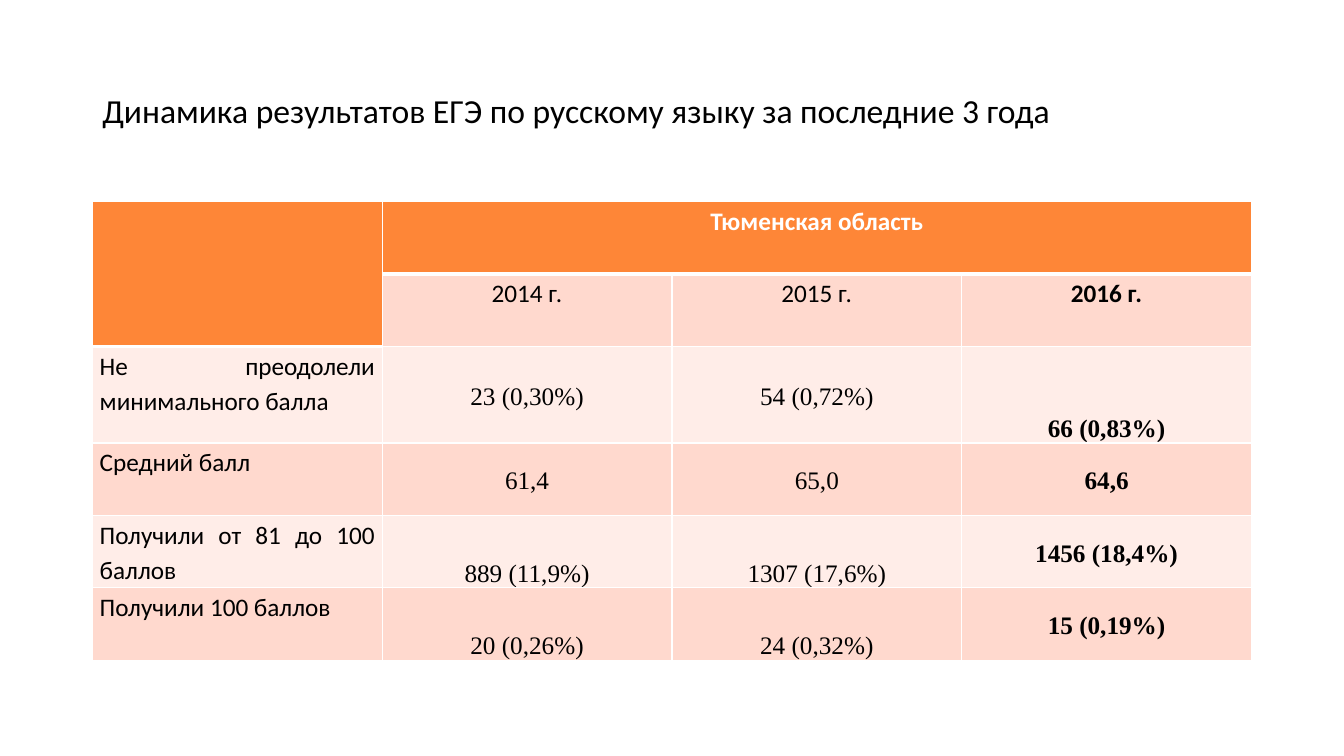
import pptx
import pptx.util
import pptx.dml.color
import pptx.enum.text
import pptx.oxml
import pptx.oxml.ns

PX = 9525
SIZE = (1280, 720)
TITLE = "Динамика результатов ЕГЭ по русскому языку за последние 3 года"
TITLE_BOX = (88, 38, 1104, 139)
GRID_AT = (88, 192)
COL = 276
ROWS = [69, 69, 92, 69, 69, 69]
INSET = 7
DATA = [
    ["", "Тюменская область", "", ""],
    ["", "2014 г.", "2015 г.", "2016 г."],
    ["Не преодолели минимального балла", "23 (0,30%)", "54 (0,72%)", "66 (0,83%)"],
    ["Средний балл", "61,4", "65,0", "64,6"],
    ["Получили от 81 до 100 баллов", "889 (11,9%)", "1307 (17,6%)", "1456 (18,4%)"],
    ["Получили 100 баллов", "20 (0,26%)", "24 (0,32%)", "15 (0,19%)"],
]
ANCHORS = ["tttt", "tttt", "tmmb", "tmmm", "tbbm", "tbbm"]
THEME = {
    "head": "FE8637", "dark": "FFD9CE", "light": "FFEDE8",
    "white": "FFFFFF", "black": "000000",
    "sans": "Calibri", "serif": "Times New Roman",
    "title": 24, "body": 18, "thin": 1, "thick": 3,
}
ALIGN = pptx.enum.text.PP_ALIGN
ANCHOR = pptx.enum.text.MSO_ANCHOR
PLACE = {"t": ANCHOR.TOP, "m": ANCHOR.MIDDLE, "b": ANCHOR.BOTTOM}


def emu(*vals):
    return [pptx.util.Emu(v * PX) for v in vals]


def color(name):
    return pptx.dml.color.RGBColor.from_string(THEME[name])


def style(par, face, size, tint, bold, space):
    par.font.name = THEME[face]
    par.font.size = pptx.util.Pt(THEME[size])
    par.font.color.rgb = color(tint)
    par.font.bold = bold
    par.line_spacing = space


def edge(cell, side, width):
    space = pptx.oxml.ns.nsdecls("a")
    line = pptx.oxml.parse_xml(
        f'<a:ln{side} {space} w="{pptx.util.Pt(THEME[width])}">'
        f'<a:solidFill><a:srgbClr val="{THEME["white"]}"/></a:solidFill></a:ln{side}>')
    cell._tc.get_or_add_tcPr().append(line)


def is_head(row, col):
    return row == 0 or (row == 1 and col == 0)


def add_title(slide):
    frame = slide.shapes.add_textbox(*emu(*TITLE_BOX)).text_frame
    frame.word_wrap = True
    frame.vertical_anchor = ANCHOR.MIDDLE
    frame.text = TITLE
    style(frame.paragraphs[0], "sans", "title", "black", False, 0.9)


def fill_cell(cell, row, col):
    head = is_head(row, col)
    above = row == 1 or (row == 2 and col == 0)
    edge(cell, "L", "thin")
    edge(cell, "R", "thin")
    edge(cell, "T", "thick" if above else "thin")
    edge(cell, "B", "thick" if head else "thin")
    cell.fill.solid()
    cell.fill.fore_color.rgb = color("head" if head else "dark" if row % 2 else "light")
    cell.margin_left, cell.margin_right, cell.margin_top, cell.margin_bottom = emu(INSET, INSET, 0, 0)
    cell.vertical_anchor = PLACE[ANCHORS[row][col]]
    cell.text = DATA[row][col]
    par = cell.text_frame.paragraphs[0]
    par.alignment = ALIGN.CENTER if col else ALIGN.JUSTIFY
    face = "serif" if row > 1 and col else "sans"
    style(par, face, "body", "white" if head else "black", head or col == 3, 1.15)


def add_grid(slide):
    wide = len(DATA[0])
    box = emu(*GRID_AT, COL * wide, sum(ROWS))
    grid = slide.shapes.add_table(len(DATA), wide, *box).table
    for col in grid.columns:
        col.width = emu(COL)[0]
    for row, high in zip(grid.rows, ROWS):
        row.height = emu(high)[0]
    for row in range(len(DATA)):
        for col in range(wide):
            fill_cell(grid.cell(row, col), row, col)
    grid.cell(0, 0).merge(grid.cell(1, 0))
    grid.cell(0, 1).merge(grid.cell(0, 3))


def main():
    deck = pptx.Presentation()
    deck.slide_width, deck.slide_height = emu(*SIZE)
    slide = deck.slides.add_slide(deck.slide_layouts[6])
    add_title(slide)
    add_grid(slide)
    deck.save("out.pptx")


if __name__ == "__main__":
    main()
